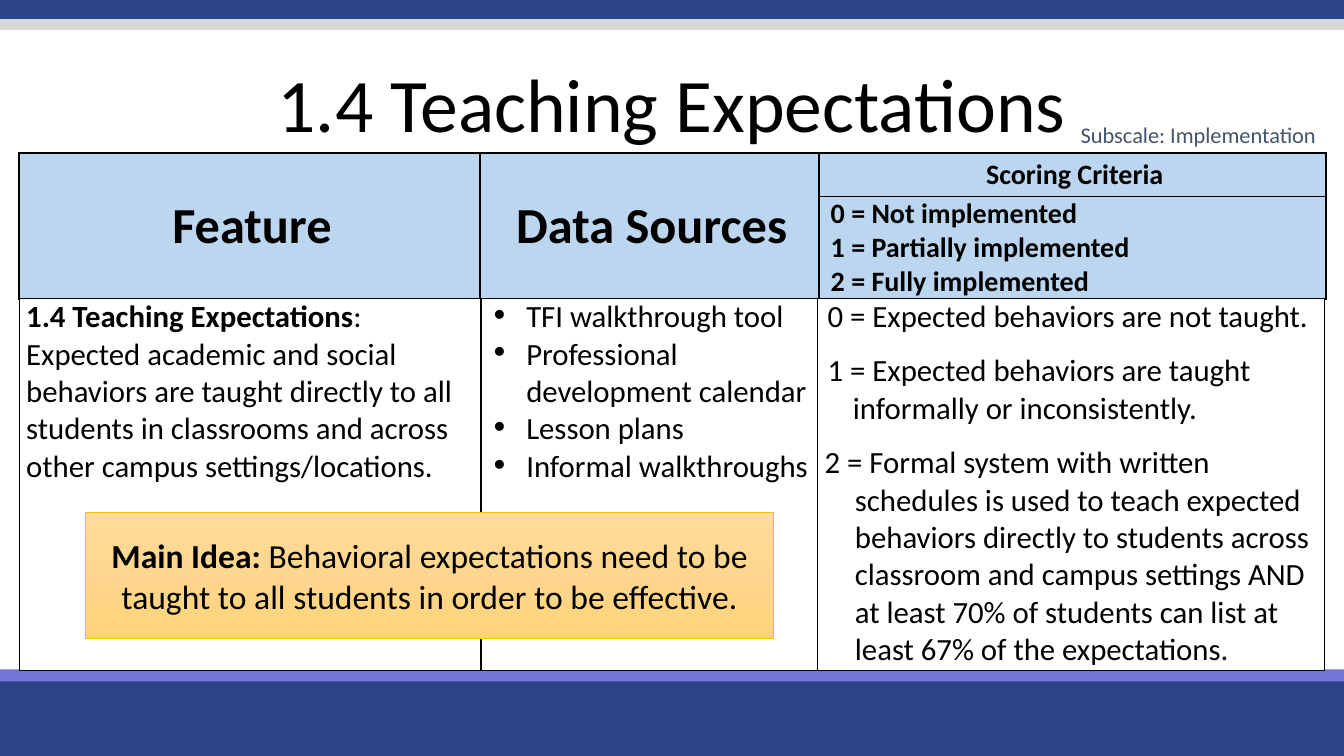
from copy import deepcopy

from lxml import etree
from pptx import Presentation
from pptx.dml.color import RGBColor
from pptx.enum.shapes import MSO_SHAPE
from pptx.enum.text import MSO_ANCHOR, PP_ALIGN
from pptx.oxml.ns import qn
from pptx.util import Inches, Pt

RECTANGLE = MSO_SHAPE.RECTANGLE
TOP, MIDDLE = MSO_ANCHOR.TOP, MSO_ANCHOR.MIDDLE
LEFT, CENTER, RIGHT = PP_ALIGN.LEFT, PP_ALIGN.CENTER, PP_ALIGN.RIGHT

BLACK = RGBColor(0, 0, 0)
WHITE = RGBColor(0xFF, 0xFF, 0xFF)
NAVY = RGBColor(0x2E, 0x44, 0x88)
VIOLET = RGBColor(0x74, 0x76, 0xDA)
GRAY = RGBColor(0xD9, 0xD9, 0xD9)
SLATE = RGBColor(0x44, 0x54, 0x6A)
PALE_BLUE = RGBColor(0xBB, 0xD6, 0xEE)
GOLD = RGBColor(0xFF, 0xC0, 0x00)
GOLD_STOPS = [(0, RGBColor(0xFF, 0xDC, 0x9B)), (0.5, RGBColor(0xFF, 0xD6, 0x8D)),
              (1, RGBColor(0xFF, 0xD4, 0x78))]

FONT = "Calibri"
SLIDE_WIDTH = 13.33
BANDS = [(6.7, 0.8, NAVY), (6.64, 0.12, VIOLET), (-0.03, 0.22, NAVY), (0.19, 0.11, GRAY)]
TABLE_LEFT, TABLE_WIDTH = 0.19, 12.96
HEADER_INDENT = (0.36, -0.31)

LEVELS = ["0 = Not implemented", "1 = Partially implemented", "2 = Fully implemented"]
SOURCES = ["TFI walkthrough tool", "Professional development calendar",
           "Lesson plans", "Informal walkthroughs"]
CRITERIA = [
    ("0 = Expected behaviors are not taught.", (0.28, -0.25)),
    ("1 = Expected behaviors are taught informally or inconsistently.", (0.28, -0.25)),
    ("2 = Formal system with written schedules is used to teach expected behaviors "
     "directly to students across classroom and campus settings AND at least 70% of "
     "students can list at least 67% of the expectations.", (0.3, -0.3)),
]


def format_run(run, size, bold=False, color=BLACK):
    run.font.name = FONT
    run.font.size = Pt(size)
    run.font.bold = bold
    run.font.color.rgb = color


def write_paragraph(paragraph, text, size, bold=False, color=BLACK, align=LEFT,
                    indent=None, bullet=None):
    paragraph.text = text
    paragraph.alignment = align
    properties = paragraph._p.get_or_add_pPr()
    if indent:
        properties.set("marL", str(Inches(indent[0])))
        properties.set("indent", str(Inches(indent[1])))
    if bullet:
        etree.SubElement(properties, qn("a:buChar")).set("char", bullet)
    for run in paragraph.runs:
        format_run(run, size, bold, color)


def write_lead(paragraph, lead, rest, size, align):
    """Write a bold lead-in followed by regular text."""
    write_paragraph(paragraph, lead, size, True, align=align)
    run = paragraph.add_run()
    run.text = rest
    format_run(run, size)


def write_list(text_frame, items, size, bold=False, bullet=None, gap=0):
    """Write (text, indent) items as one paragraph each."""
    for index, (text, indent) in enumerate(items):
        paragraph = text_frame.add_paragraph() if index else text_frame.paragraphs[0]
        write_paragraph(paragraph, text, size, bold, indent=indent, bullet=bullet)
        if index and gap:
            paragraph.space_before = Pt(gap)


def style_cell(cell, fill, anchor, borders):
    """Fill a cell and draw its borders, given as points for left, right, top, bottom."""
    cell.margin_left = cell.margin_right = Inches(0.07)
    cell.margin_top = cell.margin_bottom = 0
    cell.vertical_anchor = anchor
    properties = cell._tc.get_or_add_tcPr()
    for side, width in zip("LRTB", borders):
        line = etree.SubElement(properties, qn(f"a:ln{side}"), w=str(Pt(width)))
        solid = etree.SubElement(line, qn("a:solidFill"))
        etree.SubElement(solid, qn("a:srgbClr"), val=str(BLACK))
    cell.fill.solid()
    cell.fill.fore_color.rgb = fill


def add_plain_table(slide, top, widths, heights):
    frame = slide.shapes.add_table(len(heights), len(widths), Inches(TABLE_LEFT), Inches(top),
                                   Inches(TABLE_WIDTH), Inches(sum(heights)))
    table = frame.table
    table.first_row = table.horz_banding = False
    for column, width in zip(table.columns, widths):
        column.width = Inches(width)
    for row, height in zip(table.rows, heights):
        row.height = Inches(height)
    return table


def add_bands(slide):
    for top, height, color in BANDS:
        band = slide.shapes.add_shape(RECTANGLE, 0, Inches(top), Inches(SLIDE_WIDTH),
                                      Inches(height))
        band.shadow.inherit = False
        band.fill.solid()
        band.fill.fore_color.rgb = color
        band.line.fill.background()


def add_title(slide, left, top, width, height):
    title = slide.shapes.title
    title.left, title.top = Inches(left), Inches(top)
    title.width, title.height = Inches(width), Inches(height)
    title.text_frame.vertical_anchor = MIDDLE
    paragraph = title.text_frame.paragraphs[0]
    write_paragraph(paragraph, "1.4 Teaching Expectations", 54, align=CENTER)
    paragraph.line_spacing = 0.9


def add_header_table(slide, top):
    table = add_plain_table(slide, top, [4.57, 3.36, 5.03], [0.43, 1.02])
    for row in range(2):
        for column in range(3):
            anchor = TOP if (row, column) == (1, 2) else MIDDLE
            bottom = 1 if row else 1.5
            style_cell(table.cell(row, column), PALE_BLUE, anchor, (1.5, 1.5, 1.5, bottom))
    headings = [("Feature", 36), ("Data Sources", 36), ("Scoring Criteria", 20)]
    for column, (text, size) in enumerate(headings):
        cell = table.cell(0, column)
        write_paragraph(cell.text_frame.paragraphs[0], text, size, True, align=CENTER,
                        indent=HEADER_INDENT)
        if column < 2:
            cell.merge(table.cell(1, column))
    write_list(table.cell(1, 2).text_frame, [(text, HEADER_INDENT) for text in LEVELS], 20, True)


def add_body_table(slide, top):
    table = add_plain_table(slide, top, [4.58, 3.34, 5.03], [3.69])
    feature, sources, scoring = [table.cell(0, column) for column in range(3)]
    for cell in (feature, sources, scoring):
        style_cell(cell, WHITE, TOP, (1, 1, 1, 1))
    write_lead(feature.text_frame.paragraphs[0], "1.4 Teaching Expectations",
               ": Expected academic and social behaviors are taught directly to all "
               "students in classrooms and across other campus settings/locations.", 22, LEFT)
    write_list(sources.text_frame, [(text, (0.38, -0.36)) for text in SOURCES], 22, bullet="∙")
    write_list(scoring.text_frame, CRITERIA, 22, gap=12)


def add_main_idea(slide, left, top, width, height):
    box = slide.shapes.add_shape(RECTANGLE, Inches(left), Inches(top), Inches(width),
                                 Inches(height))
    box.shadow.inherit = False
    box.fill.gradient()
    box.fill.gradient_angle = 270
    stop_list = box._element.spPr.find(qn("a:gradFill")).find(qn("a:gsLst"))
    stop_list.append(deepcopy(stop_list[-1]))
    for stop, (position, color) in zip(box.fill.gradient_stops, GOLD_STOPS):
        stop.position = position
        stop.color.rgb = color
    box.line.color.rgb = GOLD
    box.line.width = Pt(0.75)
    box.text_frame.word_wrap = True
    box.text_frame.vertical_anchor = MIDDLE
    write_lead(box.text_frame.paragraphs[0], "Main Idea: ",
               "Behavioral expectations need to be taught to all students in order to be "
               "effective.", 24, CENTER)


def add_subscale(slide, left, top, width, height):
    label = slide.shapes.add_textbox(Inches(left), Inches(top), Inches(width), Inches(height))
    label.text_frame.word_wrap = True
    write_paragraph(label.text_frame.paragraphs[0], "Subscale: Implementation", 16,
                    color=SLATE, align=RIGHT)


def main():
    presentation = Presentation()
    presentation.slide_width = Inches(SLIDE_WIDTH)
    presentation.slide_height = Inches(7.5)
    slide = presentation.slides.add_slide(presentation.slide_layouts[5])
    add_bands(slide)
    add_title(slide, 0, 0.7, SLIDE_WIDTH, 0.75)
    add_header_table(slide, 1.52)
    add_body_table(slide, 2.96)
    add_main_idea(slide, 0.85, 5.08, 6.82, 1.26)
    add_subscale(slide, 10.57, 1.15, 2.58, 0.37)
    presentation.save("out.pptx")


if __name__ == "__main__":
    main()
